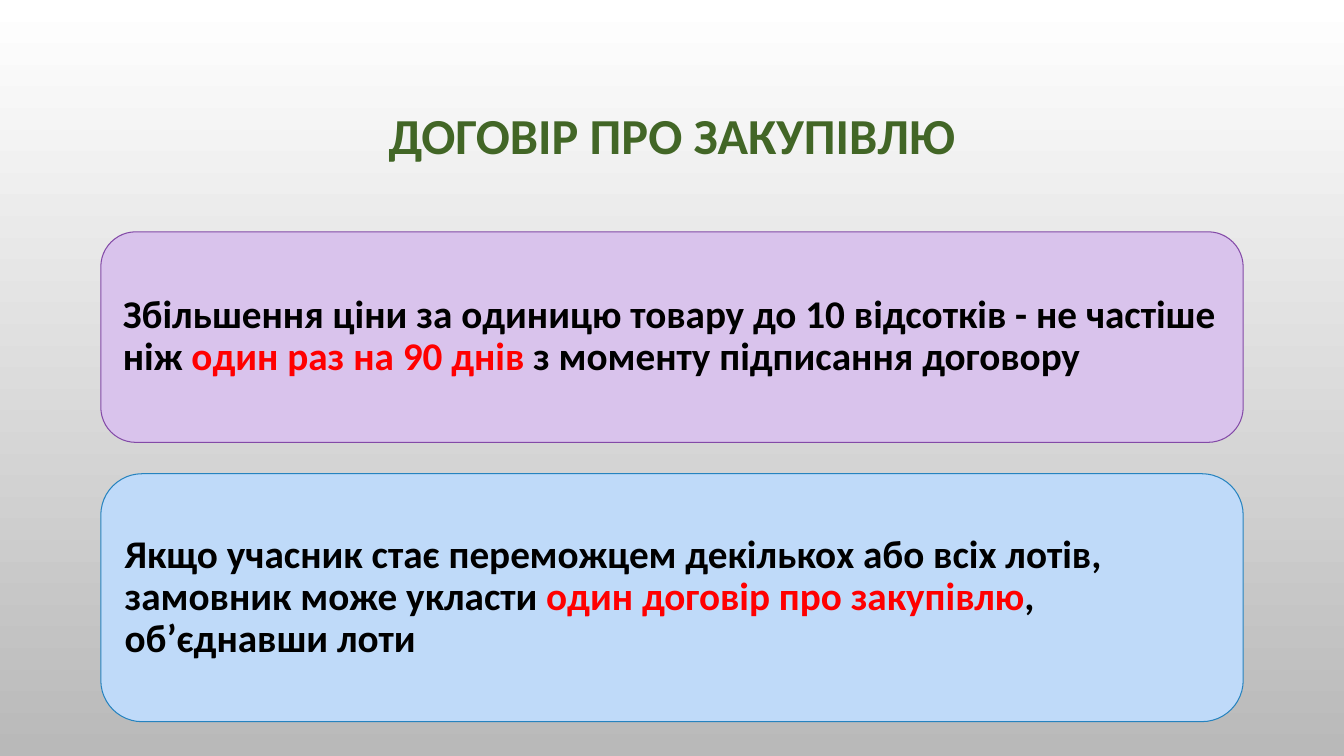
"""Build a slide about the procurement contract."""
from pptx import Presentation
from pptx import util as u
from pptx.dml.color import RGBColor
from pptx.enum import shapes, text

WHITE = RGBColor(0xFF, 0xFF, 0xFF)
GREY = RGBColor(0xB9, 0xB9, 0xB9)
GREEN = RGBColor(0x42, 0x66, 0x26)
BLACK = RGBColor(0x00, 0x00, 0x00)
RED = RGBColor(0xFF, 0x00, 0x00)
LILAC = RGBColor(0xD9, 0xC3, 0xEC)
PURPLE = RGBColor(0x83, 0x4A, 0xA7)
SKY = RGBColor(0xBF, 0xDA, 0xF9)
BLUE = RGBColor(0x26, 0x83, 0xBF)

LEFT, WIDTH = 72, 816
CORNER_INSET = 0.0488
FONT = "Calibri"

CARDS = [
    (165.6, 150.4, LILAC, PURPLE, [
        ("Збільшення ціни за одиницю товару до 10 відсотків - не частіше ніж ", BLACK),
        ("один раз на 90 днів ", RED),
        ("з моменту підписання договору", BLACK),
    ]),
    (338.4, 177.1, SKY, BLUE, [
        ("Якщо учасник стає переможцем декількох або всіх лотів, замовник може укласти ", BLACK),
        ("один договір про закупівлю", RED),
        (", об’єднавши лоти", BLACK),
    ]),
]


def paint_background(page):
    """Fill the page with a vertical white to grey gradient."""
    fill = page.background.fill
    fill.gradient()
    fill.gradient_angle = 270
    for stop, position, color in zip(fill.gradient_stops, (0, 1), (WHITE, GREY)):
        stop.position = position
        stop.color.rgb = color


def add_text(page, left, top, width, height, spans, size, align, margin):
    """Add a vertically centred box holding one bold paragraph."""
    box = page.shapes.add_textbox(u.Pt(left), u.Pt(top), u.Pt(width), u.Pt(height))
    frame = box.text_frame
    frame.word_wrap = True
    frame.vertical_anchor = text.MSO_ANCHOR.MIDDLE
    frame.margin_left = frame.margin_right = u.Pt(margin)
    frame.margin_top = frame.margin_bottom = u.Pt(margin)
    para = frame.paragraphs[0]
    para.alignment = align
    para.line_spacing = 0.9
    for words, color in spans:
        span = para.add_run()
        span.text = words
        span.font.name = FONT
        span.font.size = u.Pt(size)
        span.font.bold = True
        span.font.color.rgb = color


def add_card(page, top, height, fill, line, spans):
    """Add a rounded card with its text set inside the corners."""
    card = page.shapes.add_shape(
        shapes.MSO_SHAPE.ROUNDED_RECTANGLE,
        u.Pt(LEFT), u.Pt(top), u.Pt(WIDTH), u.Pt(height))
    card.shadow.inherit = False
    card.fill.solid()
    card.fill.fore_color.rgb = fill
    card.line.color.rgb = line
    card.line.width = u.Pt(0.75)
    inset = CORNER_INSET * height
    add_text(page, LEFT + inset, top + inset, WIDTH - 2 * inset,
             height - 2 * inset, spans, 28, text.PP_ALIGN.LEFT, 8.4)


def main():
    """Create the deck and save it."""
    deck = Presentation()
    deck.slide_width, deck.slide_height = u.Pt(960), u.Pt(540)
    page = deck.slides.add_slide(deck.slide_layouts[6])
    paint_background(page)
    add_text(page, LEFT, 49, WIDTH, 100, [("ДОГОВІР ПРО ЗАКУПІВЛЮ", GREEN)],
             36, text.PP_ALIGN.CENTER, 4)
    for card in CARDS:
        add_card(page, *card)
    deck.save("out.pptx")


if __name__ == "__main__":
    main()
